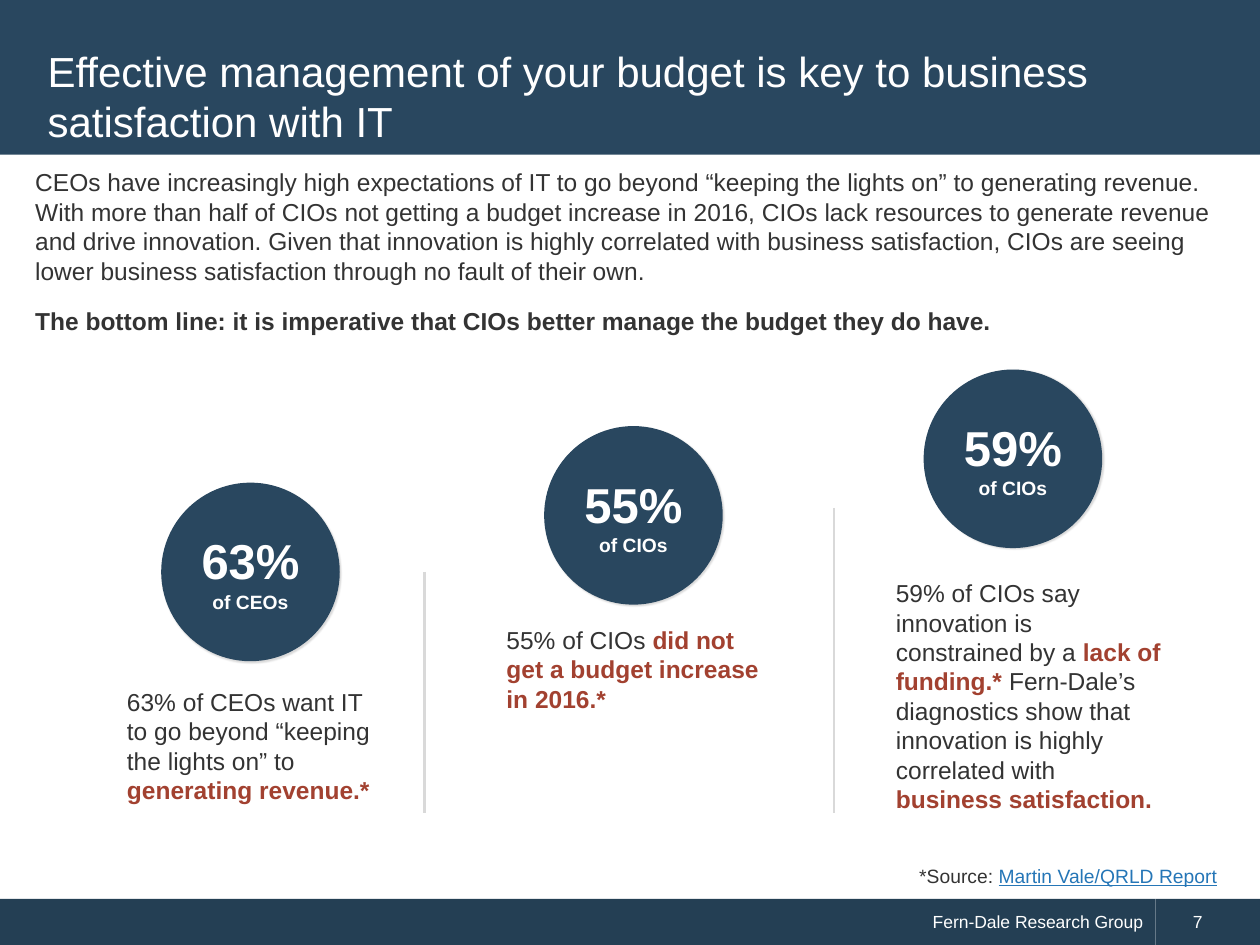
from lxml import etree
from pptx import Presentation
from pptx.dml.color import RGBColor
from pptx.enum.shapes import MSO_CONNECTOR, MSO_SHAPE
from pptx.enum.text import MSO_ANCHOR, PP_ALIGN
from pptx.oxml.ns import qn
from pptx.util import Cm, Pt

LEFT, CENTER, RIGHT = PP_ALIGN.LEFT, PP_ALIGN.CENTER, PP_ALIGN.RIGHT
TOP, MIDDLE = MSO_ANCHOR.TOP, MSO_ANCHOR.MIDDLE
RECTANGLE, OVAL = MSO_SHAPE.RECTANGLE, MSO_SHAPE.OVAL
STRAIGHT = MSO_CONNECTOR.STRAIGHT

NAVY = RGBColor(0x29, 0x47, 0x5F)
DARK_NAVY = RGBColor(0x24, 0x3F, 0x54)
WHITE = RGBColor(0xFF, 0xFF, 0xFF)
INK = RGBColor(0x33, 0x33, 0x33)
RUST = RGBColor(0xA2, 0x41, 0x30)
LINK_BLUE = RGBColor(0x25, 0x76, 0xB7)
RULE_GRAY = RGBColor(0xD9, 0xD9, 0xD9)

FONT = "Arial"
PAGE_WIDTH, PAGE_HEIGHT = 25.4, 19.05
HEADER_HEIGHT = 3.12
FOOTER_TOP, FOOTER_SPLIT = 18.12, 23.29
CIRCLE_SIZE, LOWEST_CIRCLE_TOP, CIRCLE_STEP = 3.6, 9.73, 1.14
DIVIDER_BOTTOM = 16.38

TITLE = "Effective management of your budget is key to business satisfaction with IT"
INTRO = (
    "CEOs have increasingly high expectations of IT to go beyond “keeping the lights on” "
    "to generating revenue. With more than half of CIOs not getting a budget increase in 2016, "
    "CIOs lack resources to generate revenue and drive innovation. Given that innovation is "
    "highly correlated with business satisfaction, CIOs are seeing lower business satisfaction "
    "through no fault of their own."
)
BOTTOM_LINE = "The bottom line: it is imperative that CIOs better manage the budget they do have."
FOOTER = "Fern-Dale Research Group"
PAGE_NUMBER = "7"
SOURCE_LABEL, SOURCE_NAME = "*Source: ", "Martin Vale/QRLD Report"

FINDINGS = [
    {"share": "63%", "group": "of CEOs", "circle_left": 3.25, "text_area": (2.31, 13.72, 5.56, 3.71),
     "text": [("63% of CEOs want IT to go beyond “keeping the lights on” to ", False),
              ("generating revenue.*", True)]},
    {"share": "55%", "group": "of CIOs", "circle_left": 10.97, "text_area": (9.96, 12.47, 5.72, 5.18),
     "text": [("55% of CIOs ", False), ("did not get a budget increase in 2016.*", True)]},
    {"share": "59%", "group": "of CIOs", "circle_left": 18.62, "text_area": (17.81, 11.53, 5.89, 5.08),
     "text": [("59% of CIOs say innovation is constrained by a", False),
              (" lack of funding.* ", True),
              ("Fern-Dale’s diagnostics show that innovation is highly correlated with ", False),
              ("business satisfaction.", True)]},
]
DIVIDERS = [(8.56, 11.53), (16.81, 10.24)]


def add_block(page, kind, area, color):
    block = page.shapes.add_shape(kind, *map(Cm, area))
    block.shadow.inherit = False
    block.fill.solid()
    block.fill.fore_color.rgb = color
    block.line.fill.background()
    return block


def add_text_box(page, area, anchor=TOP):
    box = page.shapes.add_textbox(*map(Cm, area))
    box.text_frame.word_wrap = True
    box.text_frame.vertical_anchor = anchor
    return box.text_frame


def write(para, text, size, color, align=LEFT, bold=False, after=0):
    para.text = text
    para.alignment = align
    para.space_after = Pt(after)
    para.font.name = FONT
    para.font.size = Pt(size)
    para.font.color.rgb = color
    para.font.bold = bold


def add_span(para, text, color, bold=False, underline=False):
    span = para.add_run()
    span.text = text
    span.font.color.rgb = color
    span.font.bold = bold
    span.font.underline = underline


def add_soft_shadow(shape):
    effects = shape._element.spPr.find(qn("a:effectLst"))
    shadow = etree.SubElement(effects, qn("a:outerShdw"), blurRad="12700", dist="12700",
                              dir="2700000", algn="tl", rotWithShape="0")
    color = etree.SubElement(shadow, qn("a:srgbClr"), val="000000")
    etree.SubElement(color, qn("a:alpha"), val="15000")


def add_frame(page):
    footer_height = PAGE_HEIGHT - FOOTER_TOP
    add_block(page, RECTANGLE, (0, 0, PAGE_WIDTH, HEADER_HEIGHT), NAVY)
    footer = add_block(page, RECTANGLE, (0, FOOTER_TOP, FOOTER_SPLIT, footer_height), DARK_NAVY)
    number = add_block(page, RECTANGLE, (FOOTER_SPLIT, FOOTER_TOP, PAGE_WIDTH - FOOTER_SPLIT, footer_height),
                       DARK_NAVY)
    number.text_frame.margin_left = Cm(0.76)
    for block, text, align in ((footer, FOOTER, RIGHT), (number, PAGE_NUMBER, LEFT)):
        block.text_frame.vertical_anchor = MIDDLE
        write(block.text_frame.paragraphs[0], text, 10, WHITE, align)
    title = add_text_box(page, (0.71, 0.71, 23.95, 2.44), MIDDLE)
    write(title.paragraphs[0], TITLE, 24, WHITE)


def add_finding(page, index, finding):
    top = LOWEST_CIRCLE_TOP - index * CIRCLE_STEP
    circle = add_block(page, OVAL, (finding["circle_left"], top, CIRCLE_SIZE, CIRCLE_SIZE), NAVY)
    add_soft_shadow(circle)
    frame = circle.text_frame
    frame.vertical_anchor = MIDDLE
    frame.margin_left = frame.margin_right = frame.margin_top = frame.margin_bottom = 0
    write(frame.paragraphs[0], finding["share"], 28, WHITE, CENTER, True)
    write(frame.add_paragraph(), finding["group"], 11, WHITE, CENTER, True)

    para = add_text_box(page, finding["text_area"]).paragraphs[0]
    write(para, "", 14, INK)
    for text, stressed in finding["text"]:
        add_span(para, text, RUST if stressed else INK, stressed)


def add_divider(page, left, top):
    divider = page.shapes.add_connector(STRAIGHT, Cm(left), Cm(top), Cm(left), Cm(DIVIDER_BOTTOM))
    divider.line.color.rgb = RULE_GRAY
    divider.line.width = Pt(1.5)
    etree.SubElement(divider._element.spPr, qn("a:effectLst"))


def main():
    deck = Presentation()
    deck.slide_width, deck.slide_height = Cm(PAGE_WIDTH), Cm(PAGE_HEIGHT)
    page = deck.slides.add_slide(deck.slide_layouts[6])
    add_frame(page)

    intro = add_text_box(page, (0.46, 3.25, 24.23, 4.06))
    write(intro.paragraphs[0], INTRO, 14, INK, after=12)
    write(intro.add_paragraph(), BOTTOM_LINE, 14, INK, bold=True, after=12)

    for index, finding in enumerate(FINDINGS):
        add_finding(page, index, finding)
    for left, top in DIVIDERS:
        add_divider(page, left, top)

    source = add_text_box(page, (17.65, 17.3, 7.14, 0.74)).paragraphs[0]
    write(source, "", 11, INK, RIGHT)
    add_span(source, SOURCE_LABEL, INK)
    add_span(source, SOURCE_NAME, LINK_BLUE, underline=True)

    deck.save("out.pptx")


if __name__ == "__main__":
    main()
